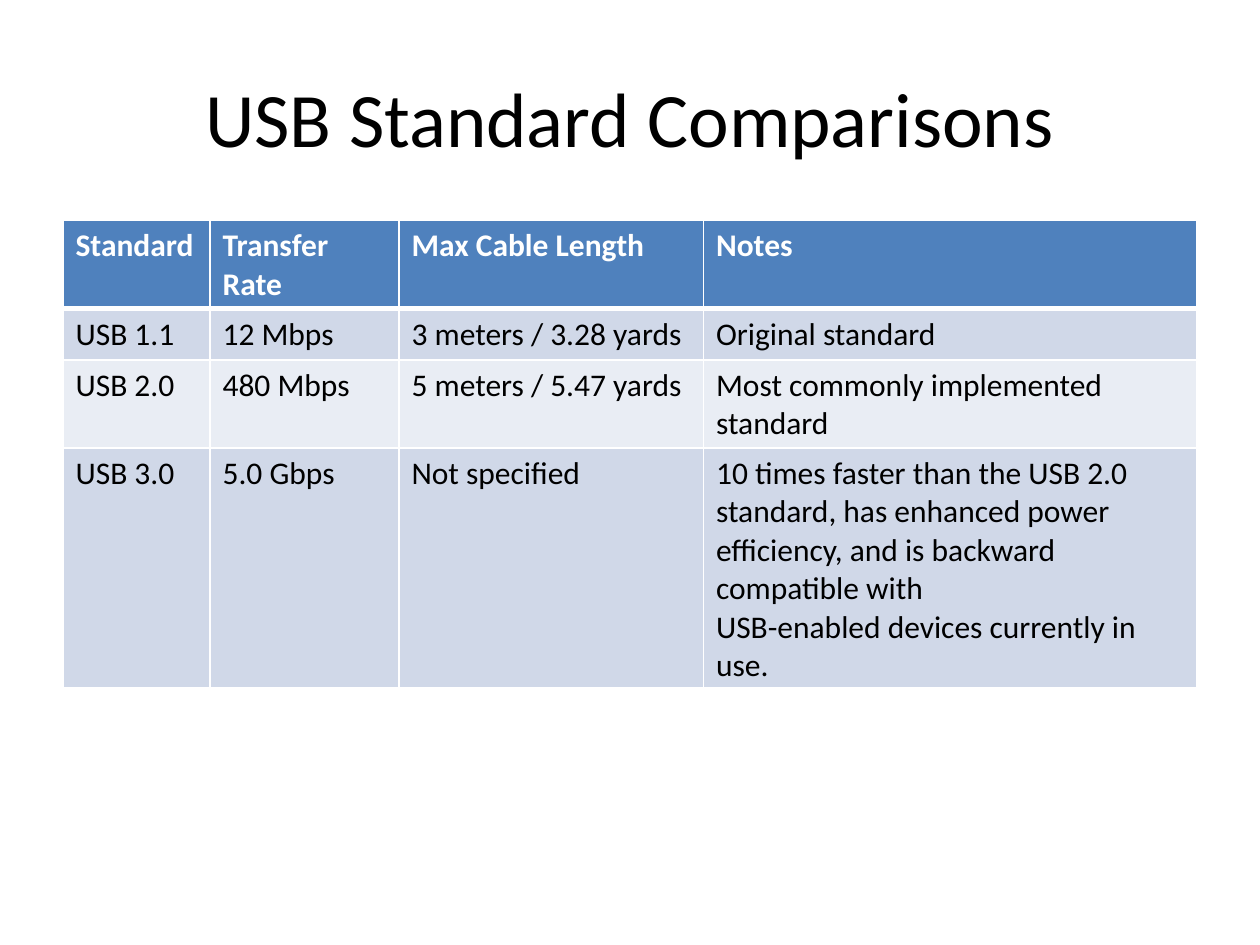
"""Build the slide that compares USB standards in a table."""
from lxml import etree
from pptx import Presentation
from pptx import util as u
from pptx.dml.color import RGBColor
from pptx.enum import text
from pptx.oxml import ns


def color(value):
    return RGBColor.from_string(value)


def add_run(paragraph, content, size, font_color, bold=False):
    run = paragraph.add_run()
    run.text = content
    run.font.name = "Calibri"
    run.font.size = u.Pt(size)
    run.font.bold = bold
    run.font.color.rgb = color(font_color)


presentation = Presentation()
presentation.slide_width = u.Pt(720)
presentation.slide_height = u.Pt(540)
slide = presentation.slides.add_slide(presentation.slide_layouts[6])

title = slide.shapes.add_textbox(u.Pt(36), u.Pt(21.6), u.Pt(648), u.Pt(90))
title.text_frame.word_wrap = True
title.text_frame.vertical_anchor = text.MSO_ANCHOR.MIDDLE
paragraph = title.text_frame.paragraphs[0]
paragraph.alignment = text.PP_ALIGN.CENTER
add_run(paragraph, "USB Standard Comparisons", 44, "000000")

rows = [
    ["Standard", "Transfer Rate", "Max Cable Length", "Notes"],
    ["USB 1.1", "12 Mbps", "3 meters / 3.28 yards", "Original standard"],
    ["USB 2.0", "480 Mbps", "5 meters / 5.47 yards", "Most commonly implemented standard"],
    ["USB 3.0", "5.0 Gbps", "Not specified",
     "10 times faster than the USB 2.0 standard, has enhanced power efficiency, "
     "and is backward compatible with\nUSB-enabled devices currently in use."],
]
row_fills = ["4F81BD", "D0D8E8", "E9EDF4", "D0D8E8"]
column_widths = [84, 108, 174, 282]
row_height = 29.2

table = slide.shapes.add_table(
    len(rows), len(column_widths), u.Pt(36), u.Pt(126),
    u.Pt(sum(column_widths)), u.Pt(row_height * len(rows))).table
for column, width in zip(table.columns, column_widths):
    column.width = u.Pt(width)

for row_index, (row, fill) in enumerate(zip(rows, row_fills)):
    table.rows[row_index].height = u.Pt(row_height)
    header = row_index == 0
    for column_index, content in enumerate(row):
        cell = table.cell(row_index, column_index)
        properties = cell._tc.get_or_add_tcPr()
        for side in "LRTB":
            thick = (row_index, side) in [(0, "B"), (1, "T")]
            border = etree.SubElement(
                properties, ns.qn(f"a:ln{side}"), w=str(u.Pt(3 if thick else 1)))
            border_fill = etree.SubElement(border, ns.qn("a:solidFill"))
            etree.SubElement(border_fill, ns.qn("a:srgbClr"), val="FFFFFF")
        cell.fill.solid()
        cell.fill.fore_color.rgb = color(fill)
        for line_index, line in enumerate(content.split("\n")):
            frame = cell.text_frame
            paragraph = frame.add_paragraph() if line_index else frame.paragraphs[0]
            add_run(paragraph, line, 18, "FFFFFF" if header else "000000", header)

presentation.save("out.pptx")
